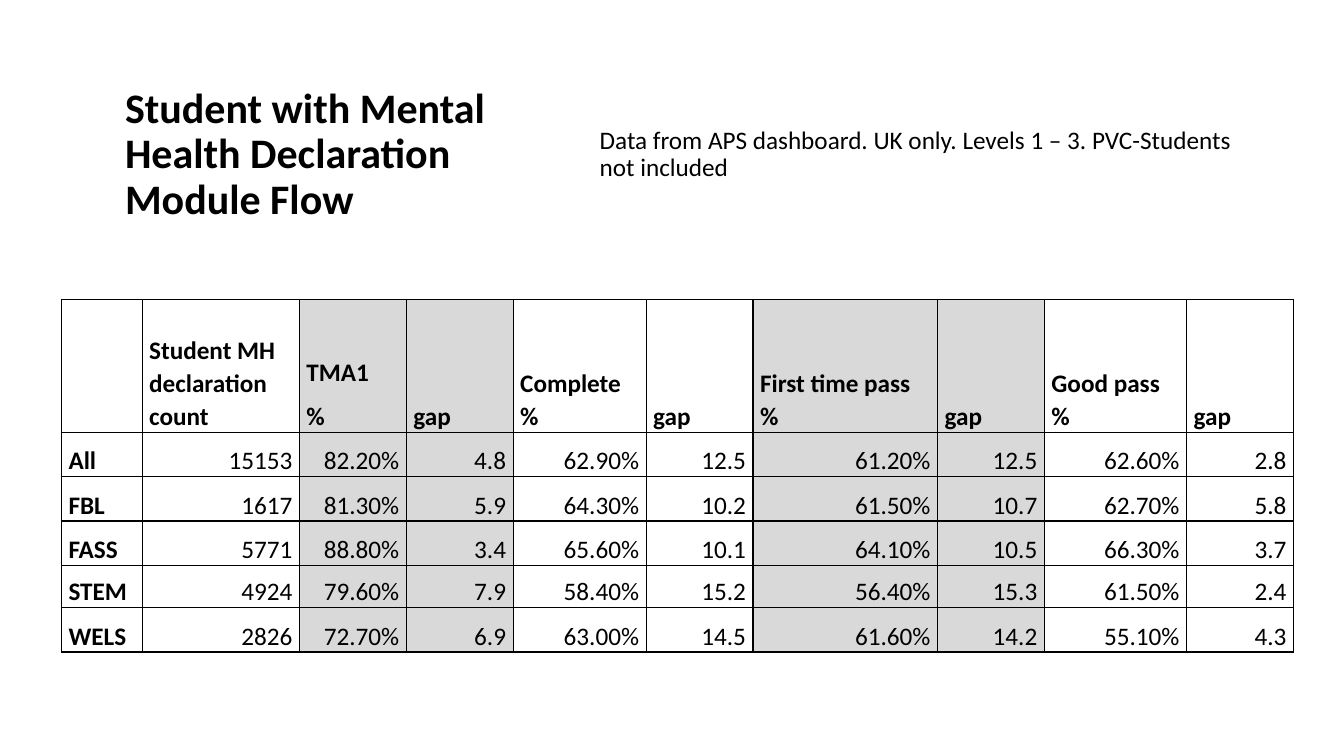
from lxml.etree import SubElement
from pptx import Presentation
from pptx.dml.color import RGBColor
from pptx.enum.text import MSO_ANCHOR, MSO_AUTO_SIZE, PP_ALIGN
from pptx.oxml.ns import qn
from pptx.util import Inches, Pt

TITLE_LINES = ["Student with Mental Health Declaration", "Module Flow"]
DATA_NOTE = ["Data from APS dashboard. UK only. Levels 1 – 3. PVC-Students not included"]
HEADINGS = [
    [], ["Student MH declaration count"], ["TMA1", "%"], ["gap"], ["Complete %"], ["gap"],
    ["First time pass %"], ["gap"], ["Good pass %"], ["gap"],
]
FACULTIES = [
    ("All", "15153", "82.20%", "4.8", "62.90%", "12.5", "61.20%", "12.5", "62.60%", "2.8"),
    ("FBL", "1617", "81.30%", "5.9", "64.30%", "10.2", "61.50%", "10.7", "62.70%", "5.8"),
    ("FASS", "5771", "88.80%", "3.4", "65.60%", "10.1", "64.10%", "10.5", "66.30%", "3.7"),
    ("STEM", "4924", "79.60%", "7.9", "58.40%", "15.2", "56.40%", "15.3", "61.50%", "2.4"),
    ("WELS", "2826", "72.70%", "6.9", "63.00%", "14.5", "61.60%", "14.2", "55.10%", "4.3"),
]
COLUMN_WIDTHS = [0.8, 1.56, 1.06, 1.06, 1.32, 1.06, 1.83, 1.06, 1.41, 1.06]
ROW_HEIGHTS = [1.32, 0.44, 0.44, 0.44, 0.42, 0.44]
SHADED_COLUMNS = {2, 3, 6, 7}
BLACK, GREY = "000000", "D9D9D9"

TITLE_PLACE = {"left": Inches(1.14), "top": Inches(0.64), "width": Inches(3.89), "height": Inches(1.8)}
FRAME_FORMAT = {"word_wrap": True, "auto_size": MSO_AUTO_SIZE.NONE, "vertical_anchor": MSO_ANCHOR.MIDDLE}
CELL_FORMAT = {
    "vertical_anchor": MSO_ANCHOR.BOTTOM, "margin_left": Inches(0.07), "margin_right": Inches(0.07),
    "margin_top": 0, "margin_bottom": 0,
}
TABLE_FORMAT = {"first_row": False, "horz_banding": False}
TITLE_PARAGRAPH = {"alignment": PP_ALIGN.LEFT, "line_spacing": 0.9}
NOTE_PARAGRAPH = {"line_spacing": 0.9, "space_after": Pt(6)}
CELL_PARAGRAPH = {"line_spacing": 1.07, "space_after": Pt(8)}


def apply_format(target, values):
    for name, value in values.items():
        setattr(target, name, value)


def paint(color_format, color):
    color_format.rgb = RGBColor.from_string(color)


def write_lines(paragraph, lines, size, bold, values):
    apply_format(paragraph, values)
    for index, line in enumerate(lines):
        if index:
            paragraph.add_line_break()
        run = paragraph.add_run()
        run.text = line
        apply_format(run.font, {"name": "Calibri", "size": Pt(size), "bold": bold})
        paint(run.font.color, BLACK)


def draw_borders(cell):
    properties = cell._tc.get_or_add_tcPr()
    for side in ("a:lnL", "a:lnR", "a:lnT", "a:lnB"):
        border = SubElement(properties, qn(side), w=str(Pt(1)))
        fill = SubElement(border, qn("a:solidFill"))
        SubElement(fill, qn("a:srgbClr"), val=BLACK)


def fill_cell(cell, paragraphs, bold, align, shaded):
    apply_format(cell, CELL_FORMAT)
    draw_borders(cell)
    if shaded:
        cell.fill.solid()
        paint(cell.fill.fore_color, GREY)
    else:
        cell.fill.background()
    frame = cell.text_frame
    for index, line in enumerate(paragraphs):
        paragraph = frame.add_paragraph() if index else frame.paragraphs[0]
        write_lines(paragraph, [line], 18, bold, {**CELL_PARAGRAPH, "alignment": align})


def main():
    deck = Presentation()
    apply_format(deck, {"slide_width": Inches(13.33), "slide_height": Inches(7.5)})
    slide = deck.slides.add_slide(deck.slide_layouts[5])

    title = slide.shapes.title
    apply_format(title, TITLE_PLACE)
    note = slide.shapes.add_textbox(Inches(5.85), Inches(0.64), Inches(6.56), Inches(1.8))
    for block in (title, note):
        apply_format(block.text_frame, FRAME_FORMAT)
    write_lines(title.text_frame.paragraphs[0], TITLE_LINES, 30, True, TITLE_PARAGRAPH)
    write_lines(note.text_frame.paragraphs[0], DATA_NOTE, 18, False, NOTE_PARAGRAPH)

    results = slide.shapes.add_table(
        len(ROW_HEIGHTS), len(COLUMN_WIDTHS), Inches(0.61), Inches(2.97),
        Inches(sum(COLUMN_WIDTHS)), Inches(sum(ROW_HEIGHTS)),
    ).table
    apply_format(results, TABLE_FORMAT)
    for column, width in zip(results.columns, COLUMN_WIDTHS):
        column.width = Inches(width)
    for row, height in zip(results.rows, ROW_HEIGHTS):
        row.height = Inches(height)

    content = [HEADINGS] + [[[value] for value in faculty] for faculty in FACULTIES]
    for r, row in enumerate(content):
        for c, paragraphs in enumerate(row):
            label = r == 0 or c == 0
            align = PP_ALIGN.LEFT if label else PP_ALIGN.RIGHT
            fill_cell(results.cell(r, c), paragraphs, label, align, c in SHADED_COLUMNS)

    deck.save("out.pptx")


if __name__ == "__main__":
    main()
